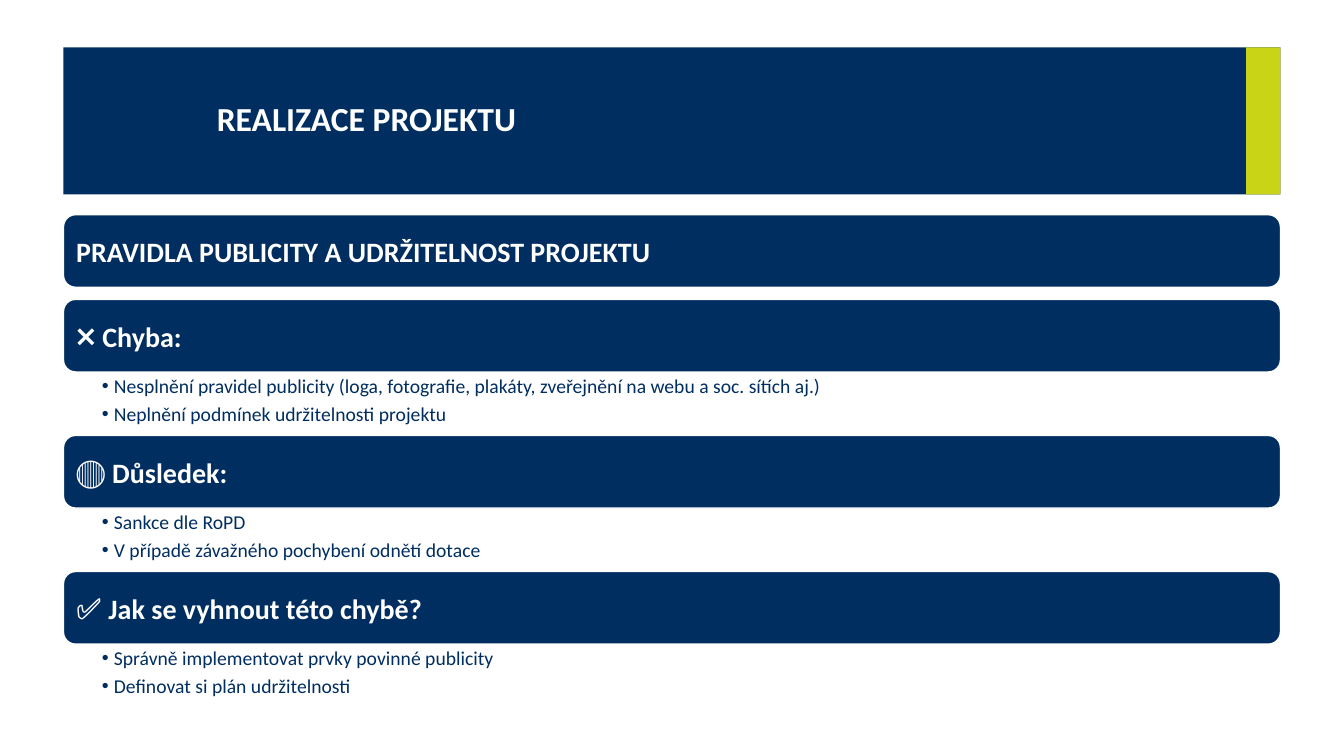
"""Build the slide on publicity rules and project sustainability."""
from dataclasses import dataclass

from lxml import etree
from pptx import Presentation
from pptx.dml.color import RGBColor
from pptx.enum.shapes import MSO_SHAPE as Shape
from pptx.enum.text import MSO_ANCHOR as Anchor, MSO_AUTO_SIZE as AutoSize, PP_ALIGN as Align
from pptx.oxml.ns import qn
from pptx.util import Inches, Pt


@dataclass(frozen=True)
class Theme:
    navy: RGBColor = RGBColor.from_string("002E60")
    lime: RGBColor = RGBColor.from_string("C9D417")
    white: RGBColor = RGBColor.from_string("FFFFFF")
    face: str = "Calibri"
    title: int = 24
    symbol: int = 21
    heading: int = 20
    body: int = 14


theme = Theme()
LEFT, WIDTH = 0.63, 12.07
BANNER_HEIGHT, LIST_HEIGHT = 0.72, 0.63
SUBJECT_TOP, FIRST_TOP, SECTION_STEP = 2.13, 2.97, 1.35

sections = [
    ("❌ ", "Chyba:", [
        "Nesplnění pravidel publicity (loga, fotografie, plakáty, zveřejnění na webu a soc. sítích aj.)",
        "Neplnění podmínek udržitelnosti projektu"]),
    ("🔴 ", "Důsledek:", [
        "Sankce dle RoPD",
        "V případě závažného pochybení odnětí dotace"]),
    ("✅ ", "Jak se vyhnout této chybě?", [
        "Správně implementovat prvky povinné publicity",
        "Definovat si plán udržitelnosti"]),
]
banners = [(SUBJECT_TOP, "", "PRAVIDLA PUBLICITY A UDRŽITELNOST PROJEKTU")]
banners += [(FIRST_TOP + index * SECTION_STEP, symbol, heading)
            for index, (symbol, heading, _) in enumerate(sections)]


def set_font(font, size, color, bold):
    font.name, font.size, font.bold = theme.face, Pt(size), bold
    font.color.rgb = color


def set_frame(box, place, margins, anchor):
    box.left, box.top, box.width, box.height = map(Inches, place)
    frame = box.text_frame
    frame.word_wrap, frame.auto_size, frame.vertical_anchor = True, AutoSize.NONE, anchor
    (frame.margin_left, frame.margin_top,
     frame.margin_right, frame.margin_bottom) = map(Inches, margins)
    return frame


deck = Presentation()
deck.slide_width, deck.slide_height = Inches(13.33), Inches(7.5)
page = deck.slides.add_slide(deck.slide_layouts.get_by_name("Comparison"))
spare, *lists = [box for box in page.placeholders if box != page.shapes.title]
spare.element.getparent().remove(spare.element)

for left, width, color in [(LEFT, WIDTH, theme.navy), (12.36, 0.34, theme.lime)]:
    band = page.shapes.add_shape(Shape.RECTANGLE, Inches(left), Inches(0.47), Inches(width), Inches(1.46))
    band.shadow.inherit = False
    band.fill.solid()
    band.fill.fore_color.rgb = color
    band.line.fill.background()

title = page.shapes.title
title.element.getparent().append(title.element)
frame = set_frame(title, (2.15, 0.47, 9.96, 1.46), (0, 0, 0, 0), Anchor.MIDDLE)
frame.text = "REALIZACE PROJEKTU"
para = frame.paragraphs[0]
para.alignment, para.line_spacing = Align.LEFT, 0.9
set_font(para.font, theme.title, theme.white, True)

for top, symbol, heading in banners:
    place = (LEFT, top, WIDTH, BANNER_HEIGHT)
    banner = page.shapes.add_shape(Shape.ROUNDED_RECTANGLE, *map(Inches, place))
    banner.shadow.inherit = False
    banner.fill.solid()
    banner.fill.fore_color.rgb = theme.navy
    banner.line.color.rgb, banner.line.width = theme.white, Pt(1)
    para = set_frame(banner, place, (0.09, 0.09, 0.09, 0.09), Anchor.MIDDLE).paragraphs[0]
    para.alignment = Align.LEFT
    for text, size in [(symbol, theme.symbol), (heading, theme.heading)]:
        if text:
            span = para.add_run()
            span.text = text
            set_font(span.font, size, theme.white, True)

for index, (box, (_, _, items)) in enumerate(zip(lists, sections)):
    top = FIRST_TOP + index * SECTION_STEP + BANNER_HEIGHT
    frame = set_frame(box, (LEFT, top, WIDTH, LIST_HEIGHT), (0.38, 0.02, 0.11, 0.02), Anchor.TOP)
    frame.text = "\n".join(items)
    for para in frame.paragraphs:
        para.level = 1
        properties = para._p.get_or_add_pPr()
        properties.set("marL", str(Inches(0.12)))
        properties.set("indent", str(Inches(-0.12)))
        etree.SubElement(properties, qn("a:buFont"), typeface="Arial")
        etree.SubElement(properties, qn("a:buChar"), char="•")
        para.alignment = Align.LEFT
        para.space_before, para.space_after = Pt(0), Pt(2.8)
        set_font(para.font, theme.body, theme.navy, False)

deck.save("out.pptx")
